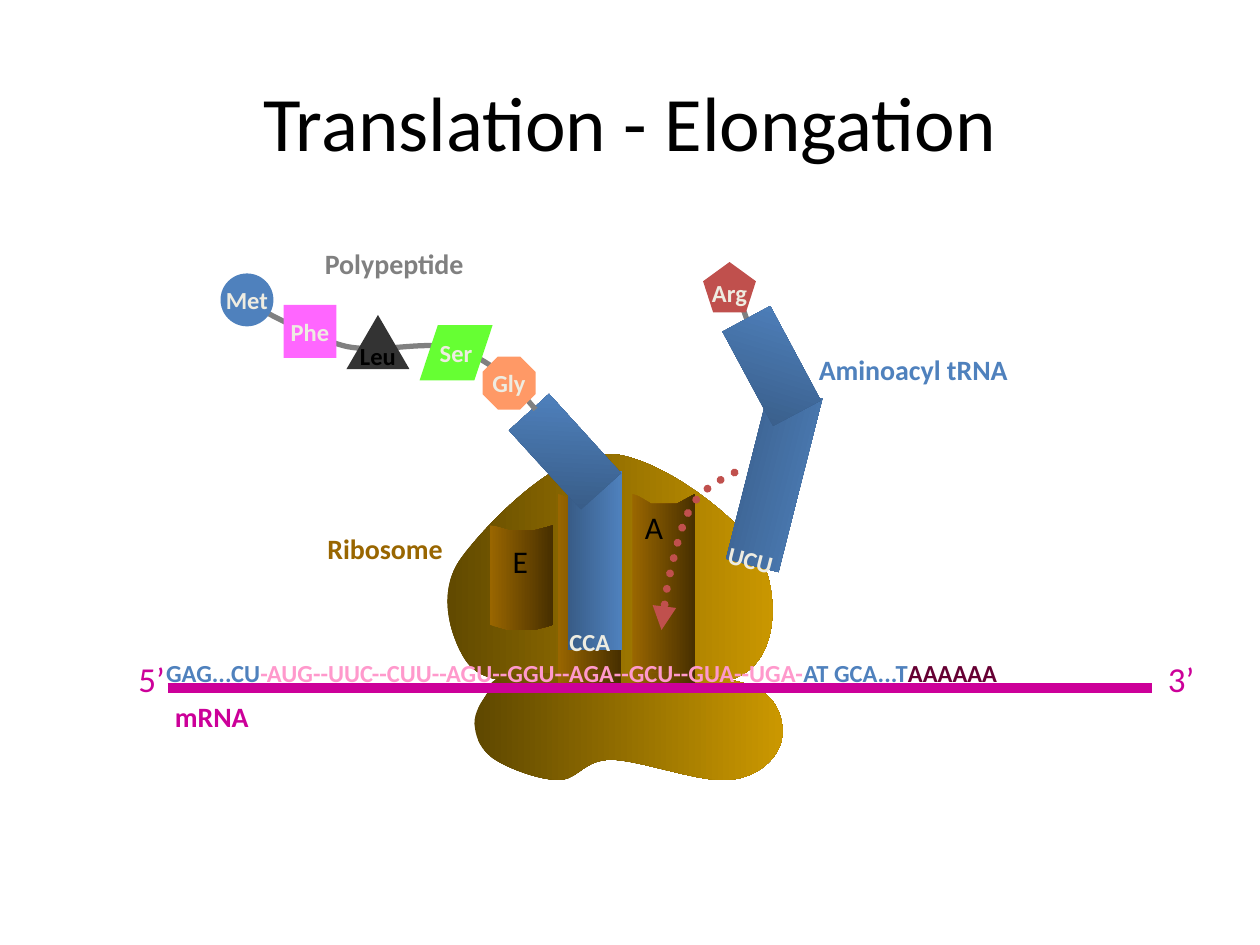
import pptx
import pptx.dml.color
import pptx.enum.dml
import pptx.enum.shapes
import pptx.enum.text
import pptx.oxml
import pptx.oxml.ns
import pptx.util

Inches = pptx.util.Inches
qn = pptx.oxml.ns.qn
SHAPE = pptx.enum.shapes.MSO_SHAPE
ANCHOR = pptx.enum.text.MSO_ANCHOR
FIT = pptx.enum.text.MSO_AUTO_SIZE
CENTER = pptx.enum.text.PP_ALIGN.CENTER

THEME = {
    "font": "Calibri",
    "title": 44, "end": 20, "site": 18, "label": 16, "code": 14,
    "black": "000000", "blue": "4F81BD", "red": "C0504D",
    "cream": "EEECE1", "gray": "808080", "brown": "996600", "umber": "472F00",
    "olive": "5E4700", "gold": "CC9900", "magenta": "CC0099", "pink": "FF99CC",
    "wine": "660033", "violet": "FF66FF", "coal": "333333", "green": "66FF33",
    "orange": "FF9966",
    "arm_shade": 46275,  # thousandths of a percent
}

# Curves: start point, then cubic segments (control, control, end)
LARGE_SUBUNIT = [
    (4.22, 5.43),
    (3.85, 5.4), (3.75, 5.35), (3.66, 5.18), (3.57, 5.01), (3.47, 4.69), (3.66, 4.43),
    (3.85, 4.17), (4.39, 3.61), (4.78, 3.6), (5.17, 3.58), (5.81, 4.06), (6, 4.35),
    (6.18, 4.64), (6.2, 5.17), (5.9, 5.35), (5.61, 5.53), (4.59, 5.46), (4.22, 5.43)]
SMALL_SUBUNIT = [
    (4.1, 5.36),
    (3.82, 5.39), (3.91, 5.46), (3.85, 5.53), (3.8, 5.6), (3.75, 5.69), (3.77, 5.78),
    (3.78, 5.86), (3.82, 5.96), (3.93, 6.03), (4.04, 6.1), (4.28, 6.19), (4.43, 6.19),
    (4.59, 6.19), (4.63, 6.03), (4.85, 6.03), (5.07, 6.03), (5.55, 6.21), (5.77, 6.19),
    (5.99, 6.18), (6.13, 6.05), (6.18, 5.94), (6.24, 5.83), (6.21, 5.63), (6.1, 5.53),
    (5.99, 5.43), (5.85, 5.39), (5.52, 5.36), (5.18, 5.33), (4.38, 5.33), (4.1, 5.36)]
ENTRY_PATH = [
    (5.83, 3.75), (5.71, 3.81), (5.58, 3.88), (5.5, 4), (5.42, 4.12), (5.37, 4.33),
    (5.33, 4.5), (5.29, 4.66), (5.27, 4.83), (5.25, 5)]
PEPTIDE_CHAIN = [
    (4.25, 3.25), (4.14, 3.12), (4.04, 3), (3.92, 2.92), (3.79, 2.83), (3.69, 2.78),
    (3.5, 2.75), (3.31, 2.72), (3, 2.8), (2.75, 2.75), (2.5, 2.69), (2.15, 2.5),
    (2, 2.42), (1.85, 2.33), (1.84, 2.29), (1.83, 2.25)]

# Binding pockets: left, top, bottom, depth of the notch
UPPER_POCKETS = [(4.43, 3.92, 5.34, .08), (5.02, 3.92, 5.34, .08), (3.89, 4.17, 4.96, .04)]
LOWER_POCKETS = [(5.02, 5.33, 5.49, .01), (4.43, 5.33, 5.49, .01)]

# tRNA arms: left, top, height, rotation, gradient angle
INCOMING_TRNA = [(5.93, 3.09, 1.42, 14.2, 0), (5.91, 2.48, .85, 331.8, 45)]
BOUND_TRNA = [(4.51, 3.74, 1.42, 0, 0), (4.27, 3.16, .85, 317.7, 45)]

# Amino acids: name, shape, box, fill, text colour, adjustment
ARG = ("Arg", SHAPE.REGULAR_PENTAGON, (5.58, 2.08, .42, .4), "red", "cream", None)
PEPTIDE = [
    ("Phe", SHAPE.RECTANGLE, (2.25, 2.42, .42, .42), "violet", "cream", None),
    ("Leu", SHAPE.ISOSCELES_TRIANGLE, (2.75, 2.5, .5, .43), "coal", "black", None),
    ("Met", SHAPE.OVAL, (1.75, 2.17, .42, .42), "blue", "cream", None),
    ("Ser", SHAPE.PARALLELOGRAM, (3.33, 2.58, .58, .44), "green", "cream", .33),
    ("Gly", SHAPE.OCTAGON, (3.83, 2.83, .42, .42), "orange", "cream", .29),
]

# Labels: text, box, size, colour, bold
RIBOSOME_LABELS = [
    ("A", (5.02, 3.98, .44, .5), "site", "black", False),
    ("E", (3.97, 4.25, .4, .5), "site", "black", False),
    ("Ribosome", (2.5, 4.17, 1.24, .37), "label", "brown", True),
]
ANTICODON = ("UCU", (5.68, 4.28, .62, .33), "code", "cream", True)
OTHER_LABELS = [
    ("Aminoacyl tRNA", (6.4, 2.75, 1.84, .37), "label", "blue", True),
    ("Polypeptide", (2.48, 1.91, 1.33, .37), "label", "gray", True),
    ("CCA", (4.42, 4.93, .62, .33), "code", "cream", True),
    ("5’", (1, 5.17, .43, .43), "end", "magenta", False),
    ("mRNA", (1.29, 5.5, .87, .37), "label", "magenta", True),
    ("3’", (9.17, 5.17, .43, .43), "end", "magenta", False),
]
MRNA = [("GAG...CU", "blue"),
        ("-AUG--UUC--CUU--AGU--GGU--AGA--GCU--GUA--UGA-", "pink"),
        ("AT GCA...T", "blue"), ("AAAAAA", "wine")]

prs = pptx.Presentation()
prs.slide_width, prs.slide_height = Inches(10), Inches(7.5)
s = prs.slides.add_slide(prs.slide_layouts[6])


def rgb(name):
    return pptx.dml.color.RGBColor.from_string(THEME[name])


def element(tag, attributes=""):
    return pptx.oxml.parse_xml(f'<a:{tag} {pptx.oxml.ns.nsdecls("a")} {attributes}/>')


def gradient(sp, start, end, angle=0):
    sp.fill.gradient()
    sp.fill.gradient_angle = angle
    for stop, name in zip(sp.fill.gradient_stops, (start, end)):
        stop.color.rgb = rgb(name)
    sp.line.fill.background()


def set_line(sp, color, width):
    sp.line.color.rgb = rgb(color)
    sp.line.width = pptx.util.Pt(width)


def set_font(p, size, color, bold):
    p.font.name, p.font.size, p.font.bold = THEME["font"], pptx.util.Pt(THEME[size]), bold
    p.font.color.rgb = rgb(color)


def outline(points, closed=True):
    points = [(Inches(x), Inches(y)) for x, y in points]
    fb = s.shapes.build_freeform(*points[0])
    fb.add_line_segments(points[1:], close=closed)
    sp = fb.convert_to_shape()
    sp.shadow.inherit = False
    return sp


def curve(points, closed=True):
    """Turn each three line segments of an outline into one cubic curve."""
    sp = outline(points, closed)
    lines = list(sp._element.iter(qn("a:lnTo")))
    for i in range(0, len(points) - 1, 3):
        bezier = element("cubicBezTo")
        lines[i].addprevious(bezier)
        for line in lines[i:i + 3]:
            bezier.append(line[0])
            line.getparent().remove(line)
    return sp


def open_curve(points, color, width):
    sp = curve(points, closed=False)
    sp.fill.background()
    set_line(sp, color, width)
    return sp


def pockets(items):
    for x, top, bottom, dip in items:
        sp = outline([(x, top), (x, bottom), (x + .15, bottom + dip), (x + .35, bottom + dip),
                      (x + .5, bottom), (x + .5, top), (x + .35, top + dip),
                      (x + .15, top + dip), (x + .05, top + dip / 4)], closed=False)
        gradient(sp, "brown", "umber")


def straight(x1, y1, x2, y2, color, width):
    sp = s.shapes.add_connector(pptx.enum.shapes.MSO_CONNECTOR.STRAIGHT,
                                *map(Inches, (x1, y1, x2, y2)))
    set_line(sp, color, width)
    sp._element.spPr.append(element("effectLst"))


def trna(arms):
    for x, y, height, rotation, angle in arms:
        sp = s.shapes.add_shape(SHAPE.RECTANGLE, *map(Inches, (x, y, .43, height)))
        sp.shadow.inherit = False
        sp.rotation = rotation
        gradient(sp, "blue", "blue", angle)
        dark = next(sp._element.spPr.iter(qn("a:srgbClr")))
        dark.append(element("shade", f'val="{THEME["arm_shade"]}"'))


def amino_acid(name, kind, box, fill, color, adjustment):
    sp = s.shapes.add_shape(kind, *map(Inches, box))
    sp.shadow.inherit = False
    if adjustment is not None:
        sp.adjustments[0] = adjustment
    sp.fill.solid()
    sp.fill.fore_color.rgb = rgb(fill)
    sp.line.fill.background()
    tf = sp.text_frame
    tf.word_wrap, tf.vertical_anchor = False, ANCHOR.MIDDLE
    p = tf.paragraphs[0]
    p.text, p.alignment = name, CENTER
    set_font(p, "code", color, True)


def label(text, box, size, color, bold):
    tb = s.shapes.add_textbox(*map(Inches, box))
    tb.text_frame.word_wrap = False
    tb.text_frame.auto_size = FIT.SHAPE_TO_FIT_TEXT
    p = tb.text_frame.paragraphs[0]
    p.text = text
    set_font(p, size, color, bold)
    return tb


# Ribosome
gradient(curve(LARGE_SUBUNIT), "olive", "gold")
pockets(UPPER_POCKETS)
for item in RIBOSOME_LABELS:
    label(*item)
gradient(curve(SMALL_SUBUNIT), "olive", "gold")
pockets(LOWER_POCKETS)

# Incoming tRNA and its dotted way into the A site
arrow = open_curve(ENTRY_PATH, "red", 4.5)
arrow.line.dash_style = pptx.enum.dml.MSO_LINE.ROUND_DOT
ln = arrow._element.spPr.find(qn("a:ln"))
ln.set("cap", "rnd")
ln.append(element("tailEnd", 'type="triangle"'))
straight(5.94, 2.57, 5.89, 2.43, "gray", 3)
trna(INCOMING_TRNA)
label(*ANTICODON).rotation = 14.2
amino_acid(*ARG)

# Bound tRNA with the growing peptide
trna(BOUND_TRNA)
open_curve(PEPTIDE_CHAIN, "gray", 3)
for item in PEPTIDE:
    amino_acid(*item)

# Title
tb = label("Translation - Elongation", (.75, .33, 8.5, 1.25), "title", "black", False)
tf = tb.text_frame
tf.auto_size, tf.word_wrap, tf.vertical_anchor = FIT.NONE, True, ANCHOR.MIDDLE
tf.paragraphs[0].alignment = CENTER

# mRNA strand and the remaining labels
straight(1.33, 5.46, 9.14, 5.46, "magenta", 6)
tf = label("", (1.22, 5.17, 8.26, .33), "code", "blue", True).text_frame
tf.word_wrap = True
for text, color in MRNA:
    r = tf.paragraphs[0].add_run()
    r.text = text
    r.font.color.rgb = rgb(color)
for item in OTHER_LABELS:
    label(*item)

prs.save("out.pptx")
